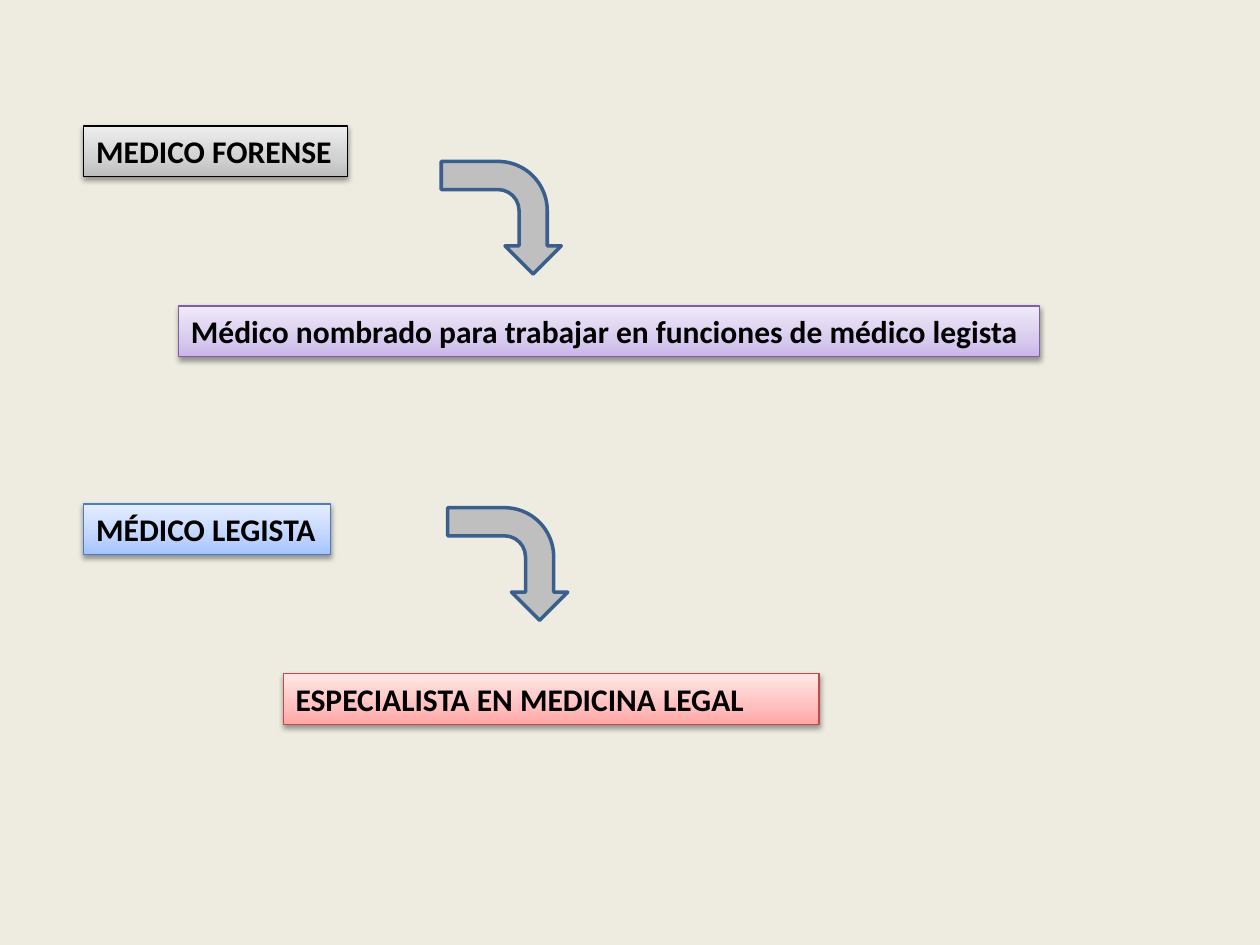
from copy import deepcopy

from lxml import etree
from pptx import Presentation
from pptx import util as u
from pptx.dml.color import RGBColor
from pptx.enum import shapes, text
from pptx.oxml.ns import qn

LABEL_HEIGHT = 1.02
TERM_LEFT = 1.69


def color(value):
    """Return an RGB colour from a hex string."""
    return RGBColor.from_string(value)


def add_gradient(shape, colors):
    """Fill a shape from bottom to top with three colours."""
    shape.fill.gradient()
    shape.fill.gradient_angle = 90
    stop_list = shape._element.spPr.find(qn("a:gradFill")).find(qn("a:gsLst"))
    stop_list.append(deepcopy(stop_list[0]))
    for stop, position, value in zip(shape.fill.gradient_stops, (0, 0.35, 1), colors):
        stop.position = position
        stop.color.rgb = color(value)


def add_shadow(shape):
    """Give a shape a soft black shadow below it."""
    shape.shadow.inherit = False
    effects = shape._element.spPr.find(qn("a:effectLst"))
    shadow = etree.SubElement(effects, qn("a:outerShdw"), blurRad="40000",
                              dist="20000", dir="5400000", rotWithShape="0")
    black = etree.SubElement(shadow, qn("a:srgbClr"), val="000000")
    etree.SubElement(black, qn("a:alpha"), val="38000")


def add_label(slide, words, left, top, width, colors, line, wrap):
    """Add a shaded box with bold text."""
    shape = slide.shapes.add_shape(
        shapes.MSO_SHAPE.RECTANGLE, u.Cm(left), u.Cm(top), u.Cm(width), u.Cm(LABEL_HEIGHT))
    add_gradient(shape, colors)
    shape.line.color.rgb = color(line)
    shape.line.width = u.Pt(0.75)
    add_shadow(shape)
    frame = shape.text_frame
    frame.word_wrap = wrap
    frame.auto_size = text.MSO_AUTO_SIZE.SHAPE_TO_FIT_TEXT
    frame.vertical_anchor = text.MSO_ANCHOR.TOP
    paragraph = frame.paragraphs[0]
    paragraph.alignment = text.PP_ALIGN.LEFT
    run = paragraph.add_run()
    run.text = words
    run.font.name = "Calibri"
    run.font.size = u.Pt(18)
    run.font.bold = True
    run.font.color.rgb = color("000000")


def add_bent_arrow(slide, left, top):
    """Add a grey arrow that bends downwards."""
    shape = slide.shapes.add_shape(
        shapes.MSO_SHAPE.BENT_ARROW, u.Cm(left), u.Cm(top), u.Cm(2.27), u.Cm(2.42))
    shape.rotation = 90
    shape.shadow.inherit = False
    shape.fill.solid()
    shape.fill.fore_color.rgb = color("BFBFBF")
    shape.line.color.rgb = color("3A5F8C")
    shape.line.width = u.Pt(2)


def main():
    """Build the slide and save it."""
    presentation = Presentation()
    presentation.slide_width, presentation.slide_height = u.Cm(25.4), u.Cm(19.05)
    slide = presentation.slides.add_slide(presentation.slide_layouts[6])
    slide.background.fill.solid()
    slide.background.fill.fore_color.rgb = color("EEECE1")

    add_label(slide, "MEDICO FORENSE", TERM_LEFT, 2.54, 5.31,
              ("BDBDBD", "D1D1D1", "EEEEEE"), "000000", False)
    add_label(slide, "MÉDICO LEGISTA", TERM_LEFT, 10.16, 4.98,
              ("A4C4FF", "BFD4FF", "E6EEFF"), "4B7EBC", False)
    add_label(slide, "ESPECIALISTA EN MEDICINA LEGAL", 5.71, 13.58, 10.8,
              ("FFA6A5", "FFC0BF", "FFE7E7"), "BF4C48", True)
    add_label(slide, "Médico nombrado para trabajar en funciones de médico legista",
              3.6, 6.17, 17.35, ("C9B5E8", "D8CBEE", "F0EAF9"), "7D60A0", True)
    add_bent_arrow(slide, 9.1, 10.16)
    add_bent_arrow(slide, 8.97, 3.18)

    presentation.save("out.pptx")


if __name__ == "__main__":
    main()
